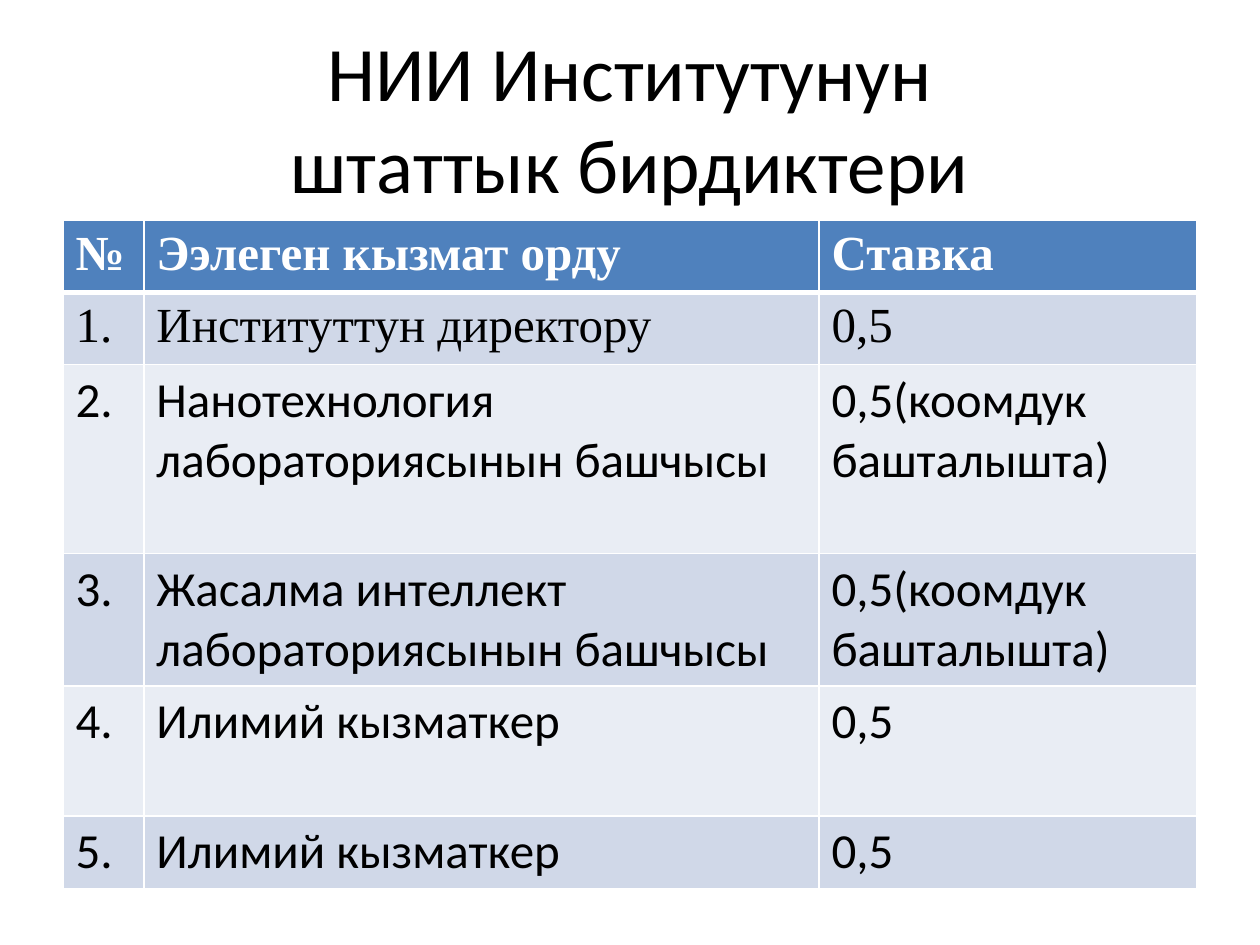
"""Build a slide with a table of the institute's staff posts."""
import pptx
import pptx.util
import pptx.dml.color
import pptx.enum.text
import pptx.oxml
import pptx.oxml.ns
from dataclasses import dataclass

Cm, Pt = pptx.util.Cm, pptx.util.Pt
Align, Anchor = pptx.enum.text.PP_ALIGN, pptx.enum.text.MSO_ANCHOR

TITLE = "НИИ Институтунун\vштаттык бирдиктери"
ROWS = [
    ("№", "Ээлеген кызмат орду", "Ставка"),
    ("1.", "Институттун директору", "0,5"),
    ("2.", "Нанотехнология лабораториясынын башчысы", "0,5(коомдук башталышта)"),
    ("3.", "Жасалма интеллект лабораториясынын башчысы", "0,5(коомдук башталышта)"),
    ("4.", "Илимий кызматкер", "0,5"),
    ("5.", "Илимий кызматкер", "0,5"),
]
WIDTHS = [1.63, 13.61, 7.62]
HEIGHTS = [1.45, 1.45, 3.81, 2.62, 2.62, 1.45]
LEFT, WIDE = 1.27, 22.86


@dataclass(frozen=True)
class Theme:
    sans: str = "Calibri"
    serif: str = "Times New Roman"
    ink: str = "000000"
    light: str = "FFFFFF"
    head: str = "4F81BD"
    bands: tuple = ("E9EDF4", "D0D8E8")
    title: int = 44
    body: int = 28
    thin: int = 1
    thick: int = 3


THEME = Theme()


def color(hue):
    return pptx.dml.color.RGBColor.from_string(hue)


def style(frame, font, size, hue, bold=False):
    for para in frame.paragraphs:
        for run in para.runs:
            run.font.name = font
            run.font.size = Pt(size)
            run.font.bold = bold
            run.font.color.rgb = color(hue)


def border(cell, row):
    thick = {"B": row == 0, "T": row == 1}
    for side in "LRTB":
        width = Pt(THEME.thick if thick.get(side) else THEME.thin)
        cell._tc.get_or_add_tcPr().append(pptx.oxml.parse_xml(
            f'<a:ln{side} {pptx.oxml.ns.nsdecls("a")} w="{width}"><a:solidFill>'
            f'<a:srgbClr val="{THEME.light}"/></a:solidFill></a:ln{side}>'))


def add_title(slide):
    title = slide.shapes.title
    title.left, title.top = Cm(LEFT), Cm(0.76)
    title.width, title.height = Cm(WIDE), Cm(3.18)
    frame = title.text_frame
    frame.text = TITLE
    frame.vertical_anchor = Anchor.MIDDLE
    frame.paragraphs[0].alignment = Align.CENTER
    style(frame, THEME.sans, THEME.title, THEME.ink)


def add_staff(slide):
    table = slide.shapes.add_table(
        len(ROWS), len(WIDTHS), Cm(LEFT), Cm(4.45), Cm(WIDE), Cm(sum(HEIGHTS))).table
    for col, width in zip(table.columns, WIDTHS):
        col.width = Cm(width)
    for row, height in zip(table.rows, HEIGHTS):
        row.height = Cm(height)
    for i, words in enumerate(ROWS):
        head = i == 0
        for j, word in enumerate(words):
            cell = table.cell(i, j)
            cell.text_frame.text = word
            style(cell.text_frame, THEME.serif if i < 2 else THEME.sans,
                  THEME.body, THEME.light if head else THEME.ink, head)
            border(cell, i)
            cell.fill.solid()
            cell.fill.fore_color.rgb = color(THEME.head if head else THEME.bands[i % 2])


def main():
    deck = pptx.Presentation()
    deck.slide_width, deck.slide_height = Cm(25.4), Cm(19.05)
    slide = deck.slides.add_slide(deck.slide_layouts[5])
    add_title(slide)
    add_staff(slide)
    deck.save("out.pptx")


if __name__ == "__main__":
    main()
